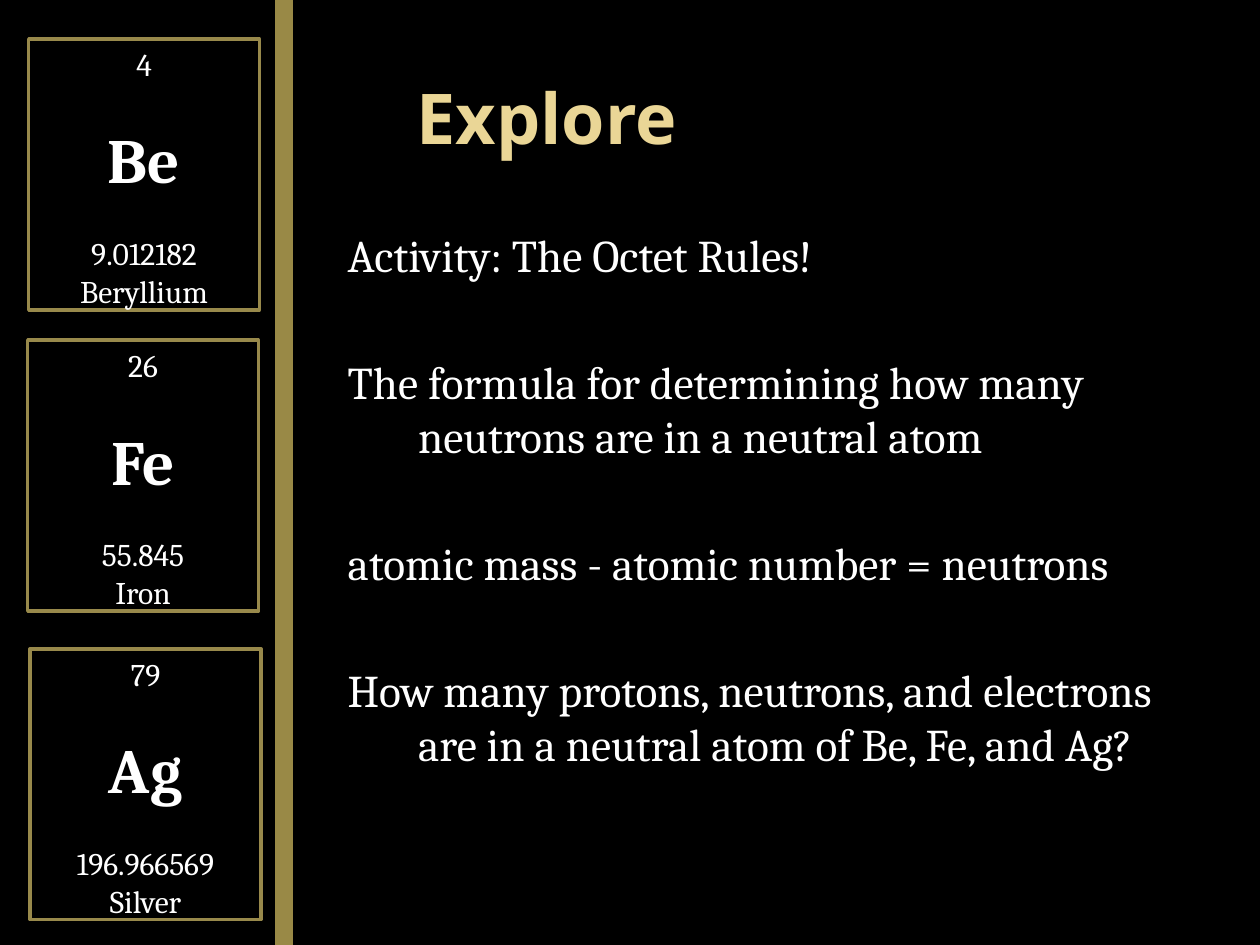
import pptx
import pptx.util
import pptx.dml.color
import pptx.enum.shapes
import pptx.enum.text
import pptx.oxml

Cm, Pt = pptx.util.Cm, pptx.util.Pt
ALIGN = pptx.enum.text.PP_ALIGN
ANCHOR = pptx.enum.text.MSO_ANCHOR
COLORS = {"black": "000000", "white": "FFFFFF", "title": "EAD696",
          "card": "98894B", "divider": "998946"}


def rgb(name):
    return pptx.dml.color.RGBColor.from_string(COLORS[name])


def write(paragraph, text, color, paragraph_format, font_format):
    run = paragraph.add_run()
    run.text = text
    run.font.color.rgb = rgb(color)
    for target, values in ((paragraph, paragraph_format), (run.font, font_format)):
        for attribute, value in values.items():
            setattr(target, attribute, value)


deck = pptx.Presentation()
deck.slide_width, deck.slide_height = Cm(25.4), Cm(19.05)
slide = deck.slides.add_slide(deck.slide_layouts[6])
slide.background.fill.solid()
slide.background.fill.fore_color.rgb = rgb("black")

# Title
title = slide.shapes.add_textbox(Cm(6.32), Cm(0.76), Cm(19.08), Cm(3.18)).text_frame
title.word_wrap = True
title.vertical_anchor = ANCHOR.MIDDLE
title.margin_left = Cm(2.08)
write(title.paragraphs[0], "Explore", "title", {},
      {"name": "Open Sans", "size": Pt(40), "bold": True})

# Activity text with hanging indents
activity = slide.shapes.add_textbox(Cm(6.38), Cm(4.45), Cm(18.42), Cm(13.08)).text_frame
activity.word_wrap = True
statements = [
    "Activity: The Octet Rules!",
    "The formula for determining how many neutrons are in a neutral atom",
    "atomic mass - atomic number = neutrons",
    "How many protons, neutrons, and electrons are in a neutral atom of Be, Fe, and Ag?",
]
for index, statement in enumerate(statements):
    paragraph = activity.paragraphs[0] if index == 0 else activity.add_paragraph()
    write(paragraph, statement, "white", {"space_before": Pt(41.4 if index else 0)},
          {"name": "Cambria", "size": Pt(25.9)})
    indents = paragraph._p.get_or_add_pPr()
    indents.set("marL", str(Cm(1.8)))
    indents.set("indent", str(Cm(-1.42)))

# Element cards: left, top, atomic number, symbol, mass, name
elements = [
    (0.58, 0.79, "4", "Be", "9.012182", "Beryllium"),
    (0.56, 6.86, "26", "Fe", "55.845", "Iron"),
    (0.61, 13.08, "79", "Ag", "196.966569", "Silver"),
]
# Size, bold and space before for each line of a card
card_lines = [(18, False, 0), (36, True, 21.6), (18, False, 21.6), (18, False, 0)]
for left, top, *facts in elements:
    card = slide.shapes.add_shape(pptx.enum.shapes.MSO_SHAPE.RECTANGLE,
                                  Cm(left), Cm(top), Cm(4.65), Cm(5.46))
    card.shadow.inherit = False
    card.fill.solid()
    card.fill.fore_color.rgb = rgb("black")
    card.line.color.rgb = rgb("card")
    card.line.width = Pt(2)
    label = card.text_frame
    label.word_wrap = True
    label.vertical_anchor = ANCHOR.TOP
    for index, (fact, (size, bold, gap)) in enumerate(zip(facts, card_lines)):
        paragraph = label.paragraphs[0] if index == 0 else label.add_paragraph()
        write(paragraph, fact, "white",
              {"alignment": ALIGN.CENTER, "space_before": Pt(gap)},
              {"name": "Cambria", "size": Pt(size), "bold": bold})

# Vertical divider
divider = slide.shapes.add_connector(pptx.enum.shapes.MSO_CONNECTOR.STRAIGHT,
                                     Cm(5.72), Cm(0), Cm(5.72), deck.slide_height)
divider.line.color.rgb = rgb("divider")
divider.line.width = Pt(10)
divider._element.spPr.append(pptx.oxml.parse_xml(
    '<a:effectLst xmlns:a="http://schemas.openxmlformats.org/drawingml/2006/main"/>'))

deck.save("out.pptx")
